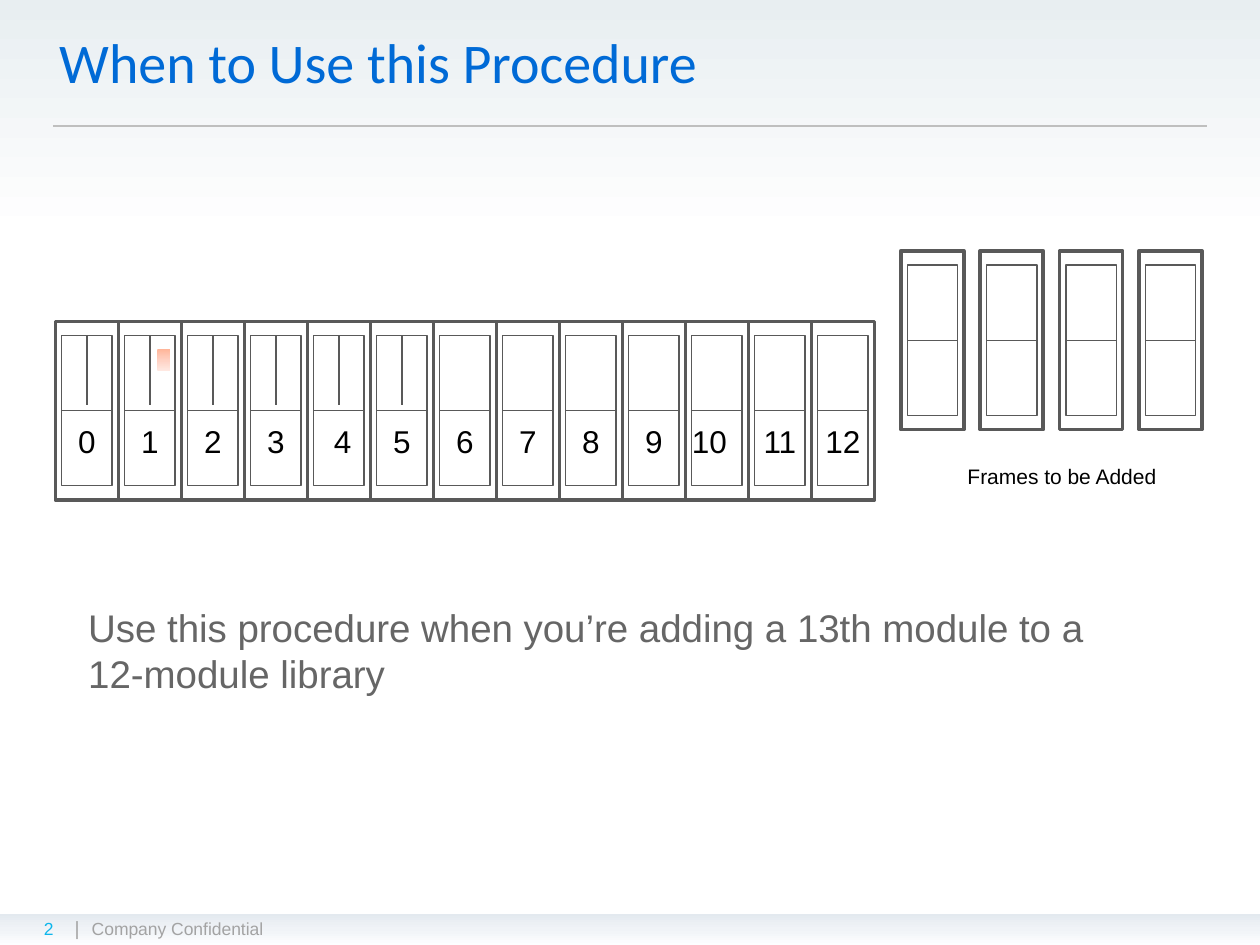
from lxml.etree import SubElement
from pptx import Presentation
from pptx.dml.color import RGBColor
from pptx.enum.shapes import MSO_CONNECTOR as CONN, MSO_SHAPE as SHAPE
from pptx.enum.text import MSO_ANCHOR as ANCHOR, MSO_AUTO_SIZE as FIT, PP_ALIGN as ALIGN
from pptx.oxml.ns import qn
from pptx.util import Inches, Pt

WIDTH, HEIGHT = 10, 7.5
FRAME_W, FRAME_H = 0.5, 1.42
FRAME_LINE = "595959"
SPLIT_FRAMES = 6
LABEL_NUDGE = {4: 0.03, 10: -0.06}


def rgb(value):
    return RGBColor.from_string(value)


def inches(box):
    return [Inches(v) for v in box]


def set_gradient(shape, stops):
    """Fill from top to bottom with (percent, colour) stops."""
    shape.fill.gradient()
    shape.fill.gradient_angle = 270
    stop_list = shape.fill._xPr.find(qn("a:gradFill")).find(qn("a:gsLst"))
    for old in list(stop_list):
        stop_list.remove(old)
    for percent, colour in stops:
        stop = SubElement(stop_list, qn("a:gs"), pos=str(percent * 1000))
        SubElement(stop, qn("a:srgbClr"), val=colour)


def add_rect(s, box, stops=None, line=None):
    rect = s.shapes.add_shape(SHAPE.RECTANGLE, *inches(box))
    rect.shadow.inherit = False
    if stops:
        set_gradient(rect, stops)
    else:
        rect.fill.background()
    if line:
        rect.line.color.rgb, rect.line.width = rgb(FRAME_LINE), Pt(line)
    else:
        rect.line.fill.background()
    return rect


def add_line(s, start, end, width, colour=FRAME_LINE):
    line = s.shapes.add_connector(CONN.STRAIGHT, *inches((*start, *end)))
    line.line.color.rgb, line.line.width = rgb(colour), Pt(width)
    SubElement(line._element.spPr, qn("a:effectLst"))
    return line


def write(shape, text, size, colour, font="Arial", align=ALIGN.LEFT, wrap=True):
    tf = shape.text_frame
    frame_format = {"word_wrap": wrap, "auto_size": FIT.NONE, "vertical_anchor": ANCHOR.TOP}
    for name, value in frame_format.items():
        setattr(tf, name, value)
    p = tf.paragraphs[0]
    p.alignment, p.space_before = align, Pt(0)
    r = p.add_run()
    r.text = text
    for name, value in {"size": Pt(size), "name": font}.items():
        setattr(r.font, name, value)
    r.font.color.rgb = rgb(colour)
    return p


def add_text(s, box, *args, **kwargs):
    return write(s.shapes.add_textbox(*inches(box)), *args, **kwargs)


def fill_placeholder(s, sp, box, *args, **kwargs):
    """Place a template placeholder in front of the other shapes."""
    sp.left, sp.top, sp.width, sp.height = inches(box)
    s.shapes._spTree.append(sp._element)
    return write(sp, *args, **kwargs)


def add_backdrop(s):
    add_rect(s, (0, 0, WIDTH, HEIGHT), [(0, "E8EEF1"), (25, "FFFFFF"), (100, "FFFFFF")])
    margin = 0.042 * WIDTH
    add_line(s, (margin, 1), (WIDTH - margin, 1), 0.75, "BFBFBF")


def add_footer(s, x, y, w, h):
    add_rect(s, (x, y, w, h), [(0, "E3E9EF"), (50, "F0F3F7"), (100, "FDFEFF")])
    add_text(s, (x + 0.063 * w, y - 0.01, w / 2, 0.47), "Company Confidential", 10, "A3A3A3")
    add_text(s, (x + 0.05 * w, y - 0.03, 0.19, 0.27), "|", 11, "A3A3A3", wrap=False)
    add_text(s, (x + 0.025 * w, y - 0.01, 0.51, 0.27), "2", 10, "0DB6EC")


def add_frame(s, x, y, w=FRAME_W, h=FRAME_H, split=False):
    """Draw a library frame; split adds a short upright in its upper half."""
    add_rect(s, (x, y, w, h), line=2)
    top = y + 0.08 * h
    inner = add_rect(s, (x + 0.1 * w, top, 0.8 * w, 0.84 * h), line=0.75)
    shelf = add_line(s, (x, y), (x + w, y), 0.75)
    shelf.begin_connect(inner, 1)
    shelf.end_connect(inner, 3)
    if split:
        middle = x + w / 2
        upright = add_line(s, (middle, top), (middle, y + 0.47 * h), 1)
        upright.begin_connect(inner, 0)


def add_library(s, x, y, count):
    for i in range(count):
        left = x + i * FRAME_W
        add_frame(s, left, y, split=i < SPLIT_FRAMES)
        if i == 1:
            add_rect(s, (left + 0.31, y + 0.22, 0.1, 0.17),
                     [(0, "FFB599"), (50, "FFD0C1"), (100, "FFE8E1")])
    for i in range(count):
        left = x + i * FRAME_W + LABEL_NUDGE.get(i, 0)
        add_text(s, (left, y + 0.75, FRAME_W, 0.4), str(i), 18, "000000",
                 align=ALIGN.CENTER, wrap=False)


def add_new_frames(s, x, y, count, step):
    for i in range(count):
        add_frame(s, x + i * step, y)
    add_text(s, (x + 0.43, y + 1.64, 1.85, 0.3), "Frames to be Added", 12, "000000")


def main():
    prs = Presentation()
    prs.slide_width, prs.slide_height = Inches(WIDTH), Inches(HEIGHT)
    s = prs.slides.add_slide(prs.slide_layouts[1])
    add_backdrop(s)
    add_footer(s, 0, 7.25, WIDTH, 0.25)
    add_library(s, 0.44, 2.55, 13)
    add_new_frames(s, 7.15, 1.99, 4, 0.63)
    fill_placeholder(s, s.shapes.title, (0.37, 0.17, 8.54, 0.64),
                     "When to Use this Procedure", 32, "006AD6", font="Calibri")
    p = fill_placeholder(s, s.placeholders[1], (0.6, 4.74, 8.52, 0.84),
                         "Use this procedure when you’re adding a 13th module to a "
                         "12-module library", 22, "666666")
    props = p._p.get_or_add_pPr()
    props.set("marL", "0")
    props.set("indent", "0")
    SubElement(props, qn("a:buNone"))
    prs.save("out.pptx")


if __name__ == "__main__":
    main()
